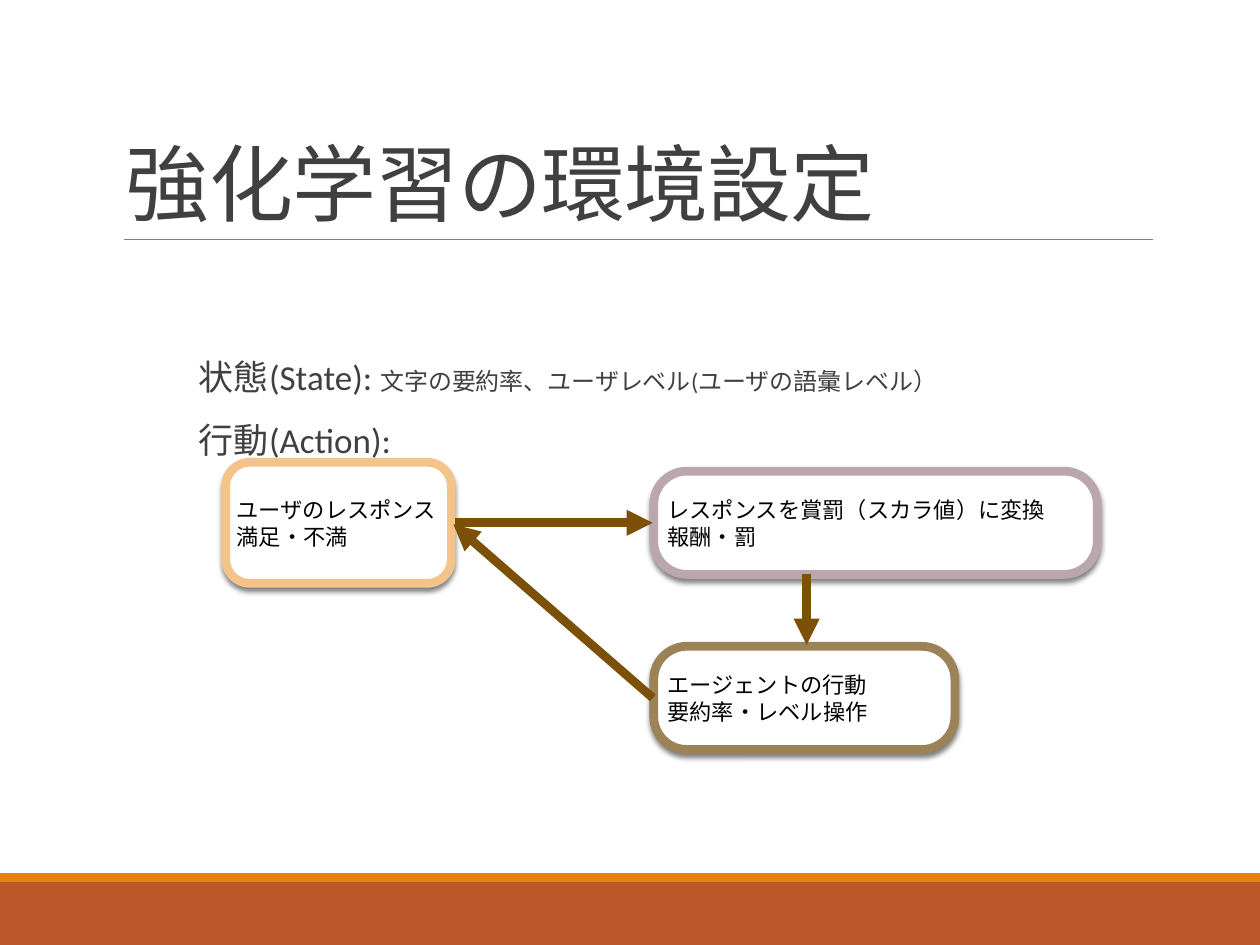
from dataclasses import dataclass

from lxml import etree
from pptx import Presentation
from pptx.dml import color as col
from pptx.enum import shapes as sh, text as tx
from pptx.oxml import ns
from pptx.util import Cm, Pt

HUES = {
    "rust": "BD582C", "orange": "E48312", "rule": "808080", "ink": "404040",
    "black": "000000", "white": "FFFFFF", "peach": "F3C38A",
    "mauve": "BAA7AE", "olive": "9B8357", "brown": "7D5008",
}
FONT = "Calibri"


@dataclass
class Box:
    x: float
    y: float
    w: float
    h: float
    bend: float
    hue: str
    lines: tuple[str, ...]


@dataclass
class Link:
    x1: float
    y1: float
    x2: float
    y2: float


BOXES = [
    Box(4.55, 9.32, 4.55, 2.44, 0.2, "peach", ("ユーザのレスポンス", "満足・不満")),
    Box(13.18, 9.5, 8.94, 2.08, 0.32, "mauve",
        ("レスポンスを賞罰（スカラ値）に変換", "報酬・罰")),
    Box(13.18, 13.03, 6.07, 2.08, 0.32, "olive",
        ("エージェントの行動", "要約率・レベル操作")),
]
LINKS = [
    Link(9.17, 10.54, 13.16, 10.54),
    Link(13.16, 14.07, 9.14, 10.57),
    Link(16.26, 11.58, 16.26, 13.0),
]


def rgb(hue: str) -> col.RGBColor:
    return col.RGBColor.from_string(HUES[hue])


def sub(root, tag: str, **attrs: str):
    return etree.SubElement(root, ns.qn(tag), attrs)


def add_run(para, words: str, size: float, hue: str):
    run = para.add_run()
    run.text = words
    run.font.size = Pt(size)
    run.font.name = FONT
    run.font.color.rgb = rgb(hue)
    return run


def set_frame(frame, anchor, side: float, edge: float) -> None:
    frame.word_wrap = True
    frame.vertical_anchor = anchor
    frame.margin_left = frame.margin_right = Cm(side)
    frame.margin_top = frame.margin_bottom = Cm(edge)


def add_text(slide, x: float, y: float, w: float, h: float):
    area = slide.shapes.add_textbox(Cm(x), Cm(y), Cm(w), Cm(h))
    return area.text_frame


def add_band(slide, y: float, h: float, hue: str) -> None:
    band = slide.shapes.add_shape(
        sh.MSO_SHAPE.RECTANGLE, 0, Cm(y), Cm(25.4), Cm(h))
    band.shadow.inherit = False
    band.fill.solid()
    band.fill.fore_color.rgb = rgb(hue)
    band.line.fill.background()


def add_line(slide, link: Link, hue: str, width: float, head: bool) -> None:
    line = slide.shapes.add_connector(
        sh.MSO_CONNECTOR.STRAIGHT,
        Cm(link.x1), Cm(link.y1), Cm(link.x2), Cm(link.y2))
    line.line.color.rgb = rgb(hue)
    line.line.width = Pt(width)
    if head:
        sub(line.line._get_or_add_ln(), "a:tailEnd", type="triangle")
    sub(line._element.spPr, "a:effectLst")


def add_box(slide, box: Box) -> None:
    shape = slide.shapes.add_shape(
        sh.MSO_SHAPE.ROUNDED_RECTANGLE,
        Cm(box.x), Cm(box.y), Cm(box.w), Cm(box.h))
    shape.adjustments[0] = box.bend
    shape.fill.solid()
    shape.fill.fore_color.rgb = rgb("white")
    shape.line.color.rgb = rgb(box.hue)
    shape.line.width = Pt(5)
    # Soft shadow straight below
    shape.shadow.inherit = False
    glow = shape._element.spPr.find(ns.qn("a:effectLst"))
    cast = sub(glow, "a:outerShdw", blurRad=str(Pt(3)), dist=str(Pt(2)),
               dir="5400000", rotWithShape="0")
    tint = sub(cast, "a:srgbClr", val=HUES["black"])
    sub(tint, "a:alpha", val="50000")
    # Label
    frame = shape.text_frame
    set_frame(frame, tx.MSO_ANCHOR.MIDDLE, 0.08, 0.08)
    for i, words in enumerate(box.lines):
        para = frame.add_paragraph() if i else frame.paragraphs[0]
        para.alignment = tx.PP_ALIGN.LEFT
        add_run(para, words, 12.7, "black")


def add_title(slide) -> None:
    frame = add_text(slide, 2.29, 0.79, 20.96, 4.04)
    set_frame(frame, tx.MSO_ANCHOR.BOTTOM, 0.25, 0.13)
    para = frame.paragraphs[0]
    para.line_spacing = 0.85
    run = add_run(para, "強化学習の環境設定", 48, "ink")
    run.font._element.set("spc", "-50")


def add_body(slide) -> None:
    frame = add_text(slide, 3.76, 7.14, 16.26, 9.22)
    set_frame(frame, tx.MSO_ANCHOR.TOP, 0.25, 0.13)
    rows = [
        [("状態(State): ", 20), ("文字の要約率、ユーザレベル(ユーザの語彙レベル）", 13.7)],
        [("行動(Action):", 20)],
    ]
    for i, runs in enumerate(rows):
        para = frame.add_paragraph() if i else frame.paragraphs[0]
        para.line_spacing = 0.9
        para.space_before = Pt(12)
        para.space_after = Pt(2)
        for words, size in runs:
            add_run(para, words, size, "ink")


def main() -> None:
    deck = Presentation()
    deck.slide_width, deck.slide_height = Cm(25.4), Cm(19.05)
    slide = deck.slides.add_slide(deck.slide_layouts[6])
    # Footer bands and title rule
    add_band(slide, 17.78, 1.27, "rust")
    add_band(slide, 17.6, 0.18, "orange")
    add_line(slide, Link(2.49, 4.83, 23.24, 4.83), "rule", 0.5, False)
    # Text
    add_title(slide)
    add_body(slide)
    # Feedback loop
    for box in BOXES:
        add_box(slide, box)
    for link in LINKS:
        add_line(slide, link, "brown", 5, True)
    deck.save("out.pptx")


if __name__ == "__main__":
    main()
